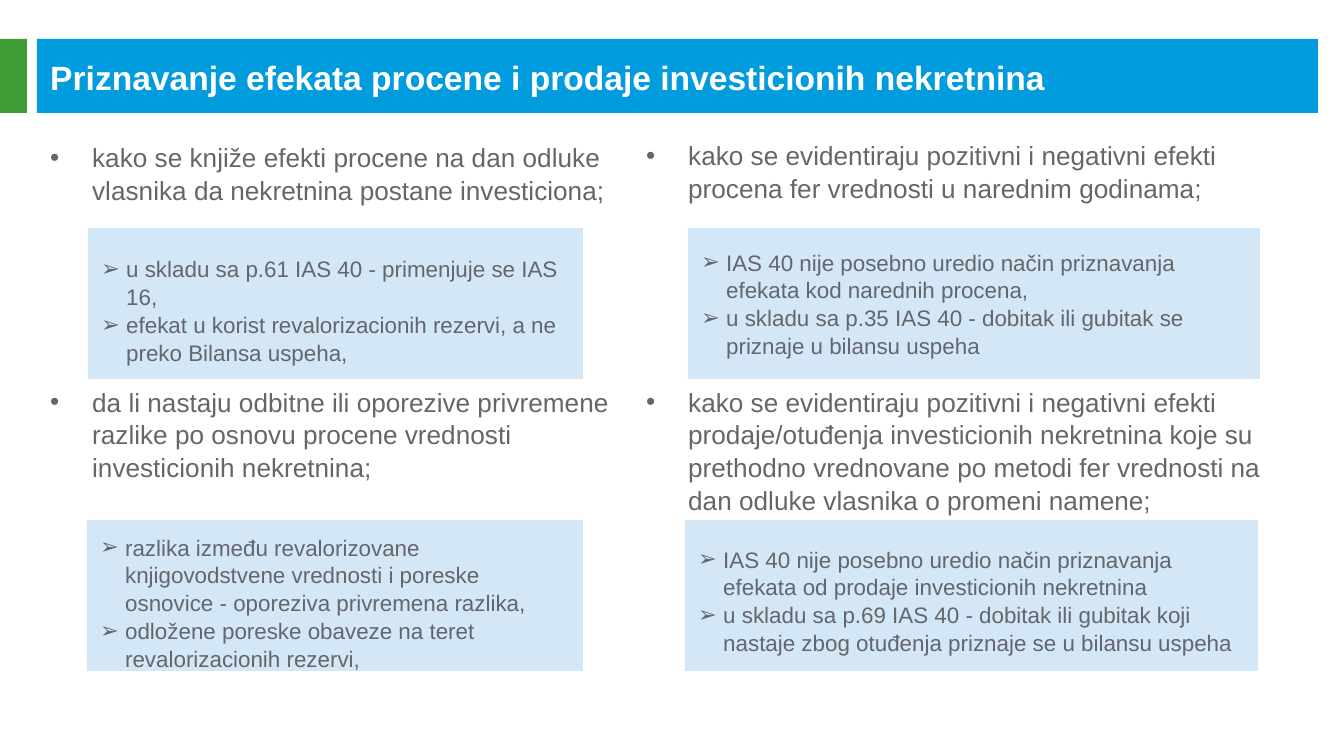
import pptx
import pptx.util
import pptx.dml.color
import pptx.enum.shapes
import pptx.enum.text
import pptx.oxml.ns
import lxml.etree

PX = 9144000 / 1344
THEME = {
    "font": "Arial",
    "blue": "009CDE", "green": "3F9C35", "panel": "D4E7F7",
    "white": "FFFFFF", "grey": "63666A",
    "title": 18, "question": 14, "answer": 12, "line": 1.04,
}


def add_box(page, left, top, width, height, fill=None):
    place = [pptx.util.Emu(round(value * PX)) for value in (left, top, width, height)]
    if fill:
        box = page.shapes.add_shape(pptx.enum.shapes.MSO_SHAPE.RECTANGLE, *place)
        box.shadow.inherit = False
        box.fill.solid()
        box.fill.fore_color.rgb = pptx.dml.color.RGBColor.from_string(THEME[fill])
        box.line.fill.background()
    else:
        box = page.shapes.add_textbox(*place)
    box.text_frame.word_wrap = True
    return box


def write(box, texts, size, color, bold=False, bullet=None, indent=0, gap=0):
    frame = box.text_frame
    for index, text in enumerate(texts):
        para = frame.paragraphs[0] if index == 0 else frame.add_paragraph()
        para.alignment = pptx.enum.text.PP_ALIGN.LEFT
        para.line_spacing = THEME["line"]
        if index and gap:
            para.space_before = pptx.util.Pt(gap)
        if bullet:
            props = para._p.get_or_add_pPr()
            props.set("marL", str(round(indent * PX)))
            props.set("indent", str(-round(indent * PX)))
            for tag, key, value in (("a:buFont", "typeface", THEME["font"]),
                                    ("a:buChar", "char", bullet)):
                mark = lxml.etree.SubElement(props, pptx.oxml.ns.qn(tag))
                mark.set(key, value)
        span = para.add_run()
        span.text = text
        formats = {"name": THEME["font"], "size": pptx.util.Pt(THEME[size]), "bold": bold}
        for name, value in formats.items():
            setattr(span.font, name, value)
        span.font.color.rgb = pptx.dml.color.RGBColor.from_string(THEME[color])


deck = pptx.Presentation()
deck.slide_width = pptx.util.Emu(round(1344 * PX))
deck.slide_height = pptx.util.Emu(round(756 * PX))
page = deck.slides.add_slide(deck.slide_layouts[6])

add_box(page, 0, 39, 27, 74, "green")
title = add_box(page, 37, 39, 1281, 74, "blue")
title.text_frame.vertical_anchor = pptx.enum.text.MSO_ANCHOR.MIDDLE
write(title, ["Priznavanje efekata procene i prodaje investicionih nekretnina"],
      "title", "white", bold=True)

questions = [
    (37, 134, 596, 96, [
        "kako se knjiže efekti procene na dan odluke vlasnika da nekretnina postane investiciona;",
        "da li nastaju odbitne ili oporezive privremene razlike po osnovu procene vrednosti investicionih nekretnina;",
    ]),
    (633, 132, 677, 97, [
        "kako se evidentiraju pozitivni i negativni efekti procena fer vrednosti u narednim godinama;",
        "kako se evidentiraju pozitivni i negativni efekti prodaje/otuđenja investicionih nekretnina koje su prethodno vrednovane po metodi fer vrednosti na dan odluke vlasnika o promeni namene;",
    ]),
]
for left, top, width, gap, texts in questions:
    column = add_box(page, left, top, width, 577)
    write(column, texts, "question", "grey", bullet="•", indent=42, gap=gap)

answers = [
    (88, 228, 495, 13, [
        "u skladu sa p.61 IAS 40 - primenjuje se IAS 16,",
        "efekat u korist revalorizacionih rezervi, a ne preko Bilansa uspeha,",
    ]),
    (87, 520, 496, 14, [
        "razlika između revalorizovane knjigovodstvene vrednosti i poreske osnovice - oporeziva privremena razlika,",
        "odložene poreske obaveze na teret revalorizacionih rezervi,",
    ]),
    (688, 228, 572, 0, [
        "IAS 40 nije posebno uredio način priznavanja efekata kod narednih procena,",
        "u skladu sa p.35 IAS 40 - dobitak ili gubitak se priznaje u bilansu uspeha",
    ]),
    (685, 520, 573, 10, [
        "IAS 40 nije posebno uredio način priznavanja efekata od prodaje investicionih nekretnina",
        "u skladu sa p.69 IAS 40 - dobitak ili gubitak koji nastaje zbog otuđenja priznaje se u bilansu uspeha",
    ]),
]
for left, top, width, inset, texts in answers:
    panel = add_box(page, left, top, width, 151, "panel")
    formats = {
        "vertical_anchor": pptx.enum.text.MSO_ANCHOR.MIDDLE,
        "margin_top": pptx.util.Emu(round(inset * PX)),
        "margin_bottom": 0,
    }
    for name, value in formats.items():
        setattr(panel.text_frame, name, value)
    write(panel, texts, "answer", "grey", bullet="➢", indent=25)

deck.save("out.pptx")
